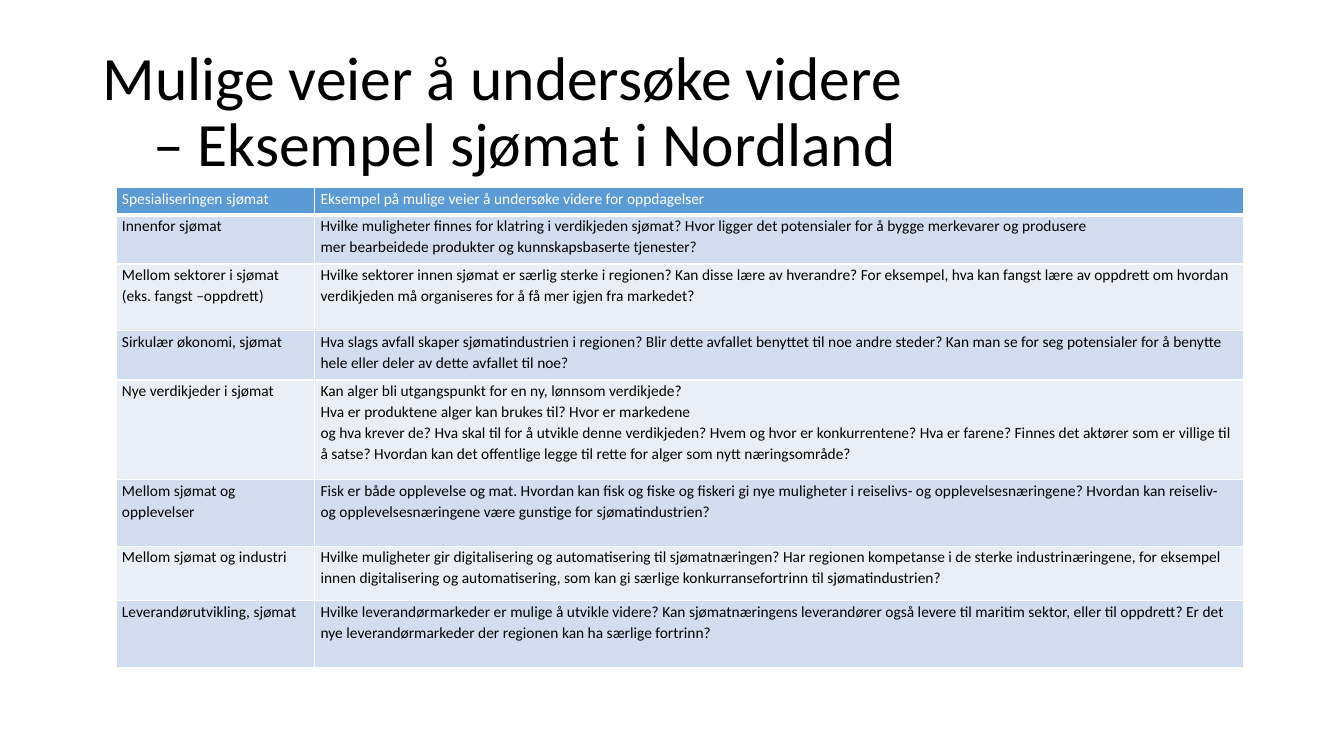
from lxml import etree
from pptx import Presentation
from pptx.dml.color import RGBColor
from pptx.enum import text
from pptx.oxml import ns
from pptx.util import Inches, Pt

# Content
TITLE = "Mulige veier å undersøke videre\v\t– Eksempel sjømat i Nordland"
ROWS = [  # height, topic, paragraphs of questions
    (0.27, "Spesialiseringen sjømat",
     ["Eksempel på mulige veier å undersøke videre for oppdagelser"]),
    (0.49, "Innenfor sjømat",
     ["Hvilke muligheter finnes for klatring i verdikjeden sjømat? Hvor ligger det "
      "potensialer for å bygge merkevarer og produsere",
      "mer bearbeidede produkter og kunnskapsbaserte tjenester?"]),
    (0.66, "Mellom sektorer i sjømat (eks. fangst –oppdrett)",
     ["Hvilke sektorer innen sjømat er særlig sterke i regionen? Kan disse lære av "
      "hverandre? For eksempel, hva kan fangst lære av oppdrett om hvordan verdikjeden "
      "må organiseres for å få mer igjen fra markedet?"]),
    (0.49, "Sirkulær økonomi, sjømat",
     ["Hva slags avfall skaper sjømatindustrien i regionen? Blir dette avfallet benyttet "
      "til noe andre steder? Kan man se for seg potensialer for å benytte hele eller "
      "deler av dette avfallet til noe?"]),
    (0.99, "Nye verdikjeder i sjømat",
     ["Kan alger bli utgangspunkt for en ny, lønnsom verdikjede?",
      "Hva er produktene alger kan brukes til? Hvor er markedene",
      "og hva krever de? Hva skal til for å utvikle denne verdikjeden? Hvem og hvor er "
      "konkurrentene? Hva er farene? Finnes det aktører som er villige til å satse? "
      "Hvordan kan det offentlige legge til rette for alger som nytt næringsområde?"]),
    (0.66, "Mellom sjømat og opplevelser",
     ["Fisk er både opplevelse og mat. Hvordan kan fisk og fiske og fiskeri gi nye "
      "muligheter i reiselivs- og opplevelsesnæringene? Hvordan kan reiseliv- og "
      "opplevelsesnæringene være gunstige for sjømatindustrien?"]),
    (0.54, "Mellom sjømat og industri",
     ["Hvilke muligheter gir digitalisering og automatisering til sjømatnæringen? Har "
      "regionen kompetanse i de sterke industrinæringene, for eksempel innen "
      "digitalisering og automatisering, som kan gi særlige konkurransefortrinn til "
      "sjømatindustrien?"]),
    (0.66, "Leverandørutvikling, sjømat",
     ["Hvilke leverandørmarkeder er mulige å utvikle videre? Kan sjømatnæringens "
      "leverandører også levere til maritim sektor, eller til oppdrett? Er det nye "
      "leverandørmarkeder der regionen kan ha særlige fortrinn?"]),
]
COLUMN_WIDTHS = [1.97, 9.21]

FONT = "Calibri"
BLACK = RGBColor(0x00, 0x00, 0x00)
WHITE = RGBColor(0xFF, 0xFF, 0xFF)
HEADER_BLUE = RGBColor(0x5B, 0x9B, 0xD5)
BANDS = [RGBColor(0xEA, 0xEF, 0xF7), RGBColor(0xD2, 0xDE, 0xEF)]


def style(para, size, color, spacing):
    para.font.name = FONT
    para.font.size = Pt(size)
    para.font.color.rgb = color
    para.line_spacing = spacing


def add_borders(cell, widths):
    properties = cell._tc.get_or_add_tcPr()
    for side, width in widths.items():
        line = etree.SubElement(properties, ns.qn("a:ln" + side), w=str(Pt(width)))
        fill = etree.SubElement(line, ns.qn("a:solidFill"))
        etree.SubElement(fill, ns.qn("a:srgbClr"), val=str(WHITE))


def fill_cell(cell, lines, row):
    header = row == 0
    add_borders(cell, {"L": 1, "R": 1, "T": 3 if row == 1 else 1, "B": 3 if header else 1})
    cell.fill.solid()
    cell.fill.fore_color.rgb = HEADER_BLUE if header else BANDS[row % 2]
    cell.margin_left = cell.margin_right = Inches(0.06)
    cell.margin_top = cell.margin_bottom = 0
    cell.text = "\n".join(lines)
    for para in cell.text_frame.paragraphs:
        style(para, 11, WHITE if header else BLACK, Pt(15))


deck = Presentation()
deck.slide_width, deck.slide_height = Inches(13.33), Inches(7.5)
page = deck.slides.add_slide(deck.slide_layouts[6])

# Title
box = page.shapes.add_textbox(Inches(0.92), Inches(0.4), Inches(11.5), Inches(1.45))
frame = box.text_frame
frame.word_wrap = True
frame.vertical_anchor = text.MSO_ANCHOR.MIDDLE
title = frame.paragraphs[0]
title.text = TITLE
style(title, 44, BLACK, 0.9)

# Table
table = page.shapes.add_table(
    len(ROWS), len(COLUMN_WIDTHS), Inches(1.15), Inches(1.86),
    Inches(sum(COLUMN_WIDTHS)), Inches(sum(height for height, _, _ in ROWS))).table
table.first_row = table.horz_banding = False
for column, width in zip(table.columns, COLUMN_WIDTHS):
    column.width = Inches(width)
for row, (height, topic, questions) in enumerate(ROWS):
    table.rows[row].height = Inches(height)
    fill_cell(table.cell(row, 0), [topic], row)
    fill_cell(table.cell(row, 1), questions, row)

deck.save("out.pptx")
